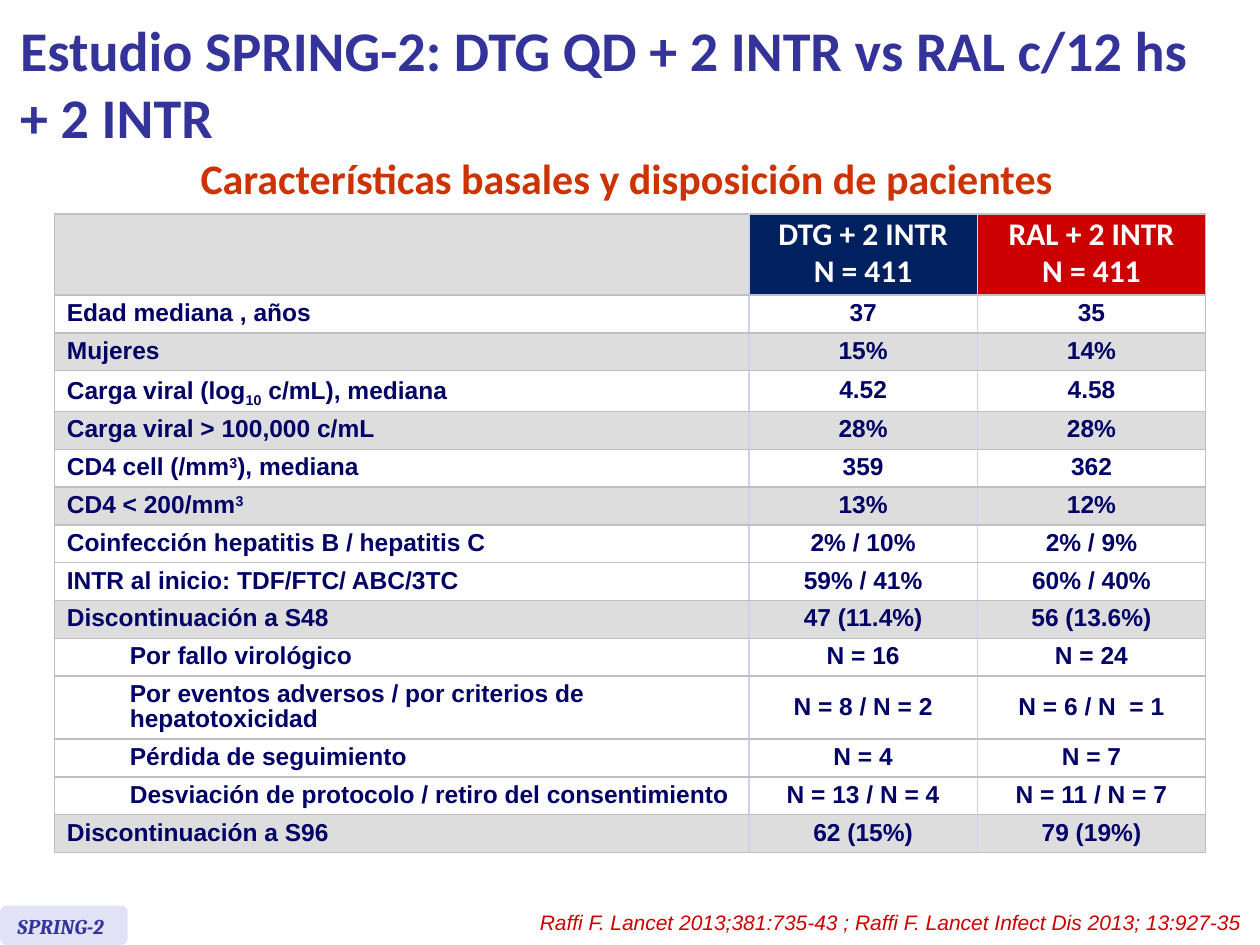
from lxml import etree
from pptx import Presentation
from pptx.dml.color import RGBColor
from pptx.enum import shapes, text
from pptx.oxml import ns
from pptx.util import Pt

NAVY, GREY, WHITE, RED = "000066", "DDDDDD", "FFFFFF", "CC0000"
LINE, INNER = "C0C0C0", "D0D0F0"
LEFT, MID, RIGHT = text.PP_ALIGN.LEFT, text.PP_ALIGN.CENTER, text.PP_ALIGN.RIGHT


def hue(code):
    return RGBColor.from_string(code)


def style(para, size, name, color, align=LEFT, bold=True, italic=False):
    para.alignment = align
    for run in para.runs:
        font = run.font
        font.size, font.name = Pt(size), name
        font.bold, font.italic = bold, italic
        font.color.rgb = hue(color)


deck = Presentation()
deck.slide_width, deck.slide_height = Pt(720), Pt(540)
slide = deck.slides.add_slide(deck.slide_layouts[5])

# Title
title = slide.shapes.title
title.left, title.top, title.width, title.height = Pt(4.3), Pt(3.6), Pt(687.6), Pt(87)
frame = title.text_frame
frame.text = "Estudio SPRING-2: DTG QD + 2 INTR vs RAL c/12 hs\v+ 2 INTR"
frame.word_wrap = True
frame.auto_size = text.MSO_AUTO_SIZE.NONE
frame.vertical_anchor = text.MSO_ANCHOR.MIDDLE
style(frame.paragraphs[0], 32, "Calibri", "333399")

# Table content: label, DTG, RAL, fill; "|" sets off raised or lowered text,
# and a leading ">" marks an indented label
rows = [
    ("", "DTG + 2 INTR\nN = 411", "RAL + 2 INTR\nN = 411", GREY),
    ("Edad mediana , años", "37", "35", WHITE),
    ("Mujeres", "15%", "14%", GREY),
    ("Carga viral (log|10| c/mL), mediana", "4.52", "4.58", WHITE),
    ("Carga viral > 100,000 c/mL", "28%", "28%", GREY),
    ("CD4 cell (/mm|3|), mediana", "359", "362", WHITE),
    ("CD4 < 200/mm|3", "13%", "12%", GREY),
    ("Coinfección hepatitis B / hepatitis C", "2% / 10%", "2% / 9%", WHITE),
    ("INTR al inicio: TDF/FTC/ ABC/3TC", "59% / 41%", "60% / 40%", WHITE),
    ("Discontinuación a S48", "47 (11.4%)", "56 (13.6%)", GREY),
    (">Por fallo virológico", "N = 16", "N = 24", WHITE),
    (">Por eventos adversos / por criterios de hepatotoxicidad",
     "N = 8 / N = 2", "N = 6 / N  = 1", WHITE),
    (">Pérdida de seguimiento", "N = 4", "N = 7", WHITE),
    (">Desviación de protocolo / retiro del consentimiento",
     "N = 13 / N = 4", "N = 11 / N = 7", WHITE),
    ("Discontinuación a S96", "62 (15%)", "79 (19%)", GREY),
]
tall = {0: 46.2, 3: 23.4, 11: 36}

# Table
grid = slide.shapes.add_table(len(rows), 3, Pt(31), Pt(122.4), Pt(658), Pt(364)).table
grid.first_row = grid.horz_banding = False
for col, width in zip(grid.columns, (397, 130.5, 130.5)):
    col.width = Pt(width)

for r, row in enumerate(rows):
    grid.rows[r].height = Pt(tall.get(r, 21.6))
    for c, words in enumerate(row[:3]):
        cell = grid.cell(r, c)
        cell.vertical_anchor = text.MSO_ANCHOR.MIDDLE

        # Borders, then fill
        edges = {"lnL": INNER if c else LINE, "lnR": LINE if c == 2 else INNER,
                 "lnT": LINE, "lnB": LINE}
        for tag, color in edges.items():
            edge = etree.SubElement(cell._tc.get_or_add_tcPr(), ns.qn("a:" + tag), w=str(Pt(1)))
            solid = etree.SubElement(edge, ns.qn("a:solidFill"))
            etree.SubElement(solid, ns.qn("a:srgbClr"), val=color)
        cell.fill.solid()
        cell.fill.fore_color.rgb = hue((GREY, "002060", RED)[c] if r == 0 else row[3])

        # Words
        cell.text_frame.text = "" if "|" in words else words.lstrip(">")
        first = cell.text_frame.paragraphs[0]
        if "|" in words:
            for i, part in enumerate(words.split("|")):
                run = first.add_run()
                run.text = part
                if i % 2:
                    shift = "-25000" if part == "10" else "30000"
                    run._r.get_or_add_rPr().set("baseline", shift)
        if words.startswith(">"):
            first.level = 1
            props = first._p.get_or_add_pPr()
            props.set("marL", str(Pt(36)))
            props.set("indent", "0")
        for para in cell.text_frame.paragraphs:
            para.line_spacing = 0.9 if r else 0.8
            if r:
                style(para, 14, "Arial", NAVY, MID if c else LEFT)
            else:
                style(para, 18, "Calibri", WHITE, MID)
        for para in cell.text_frame.paragraphs[1:]:
            para.space_before = Pt(3.6)

# Tag behind the study name
tag = slide.shapes.add_shape(shapes.MSO_SHAPE.ROUNDED_RECTANGLE,
                             Pt(0), Pt(517.5), Pt(73), Pt(22.5))
tag.shadow.inherit = False
tag.fill.solid()
tag.fill.fore_color.rgb = hue("E2E2F6")
tag.line.fill.background()

# Subtitle, citation and study name
notes = [
    ("Características basales y disposición de pacientes",
     (76.3, 97.2, 563.8, 25.2), (24, "Calibri", "CC3300", MID)),
    ("Raffi F. Lancet 2013;381:735-43 ; Raffi F. Lancet Infect Dis 2013; 13:927-35 ",
     (293.8, 516.2, 426.2, 21.6), (12, "Arial", RED, RIGHT, False, True)),
    ("SPRING-2", (2.9, 518.4, 67.7, 21.6), (12, "Cambria", "333399", LEFT, True, True)),
]
for words, place, look in notes:
    frame = slide.shapes.add_textbox(*map(Pt, place)).text_frame
    frame.word_wrap = True
    frame.text = words
    style(frame.paragraphs[0], *look)
    if look[0] == 24:
        frame.paragraphs[0].line_spacing = Pt(15.2)

deck.save("out.pptx")
